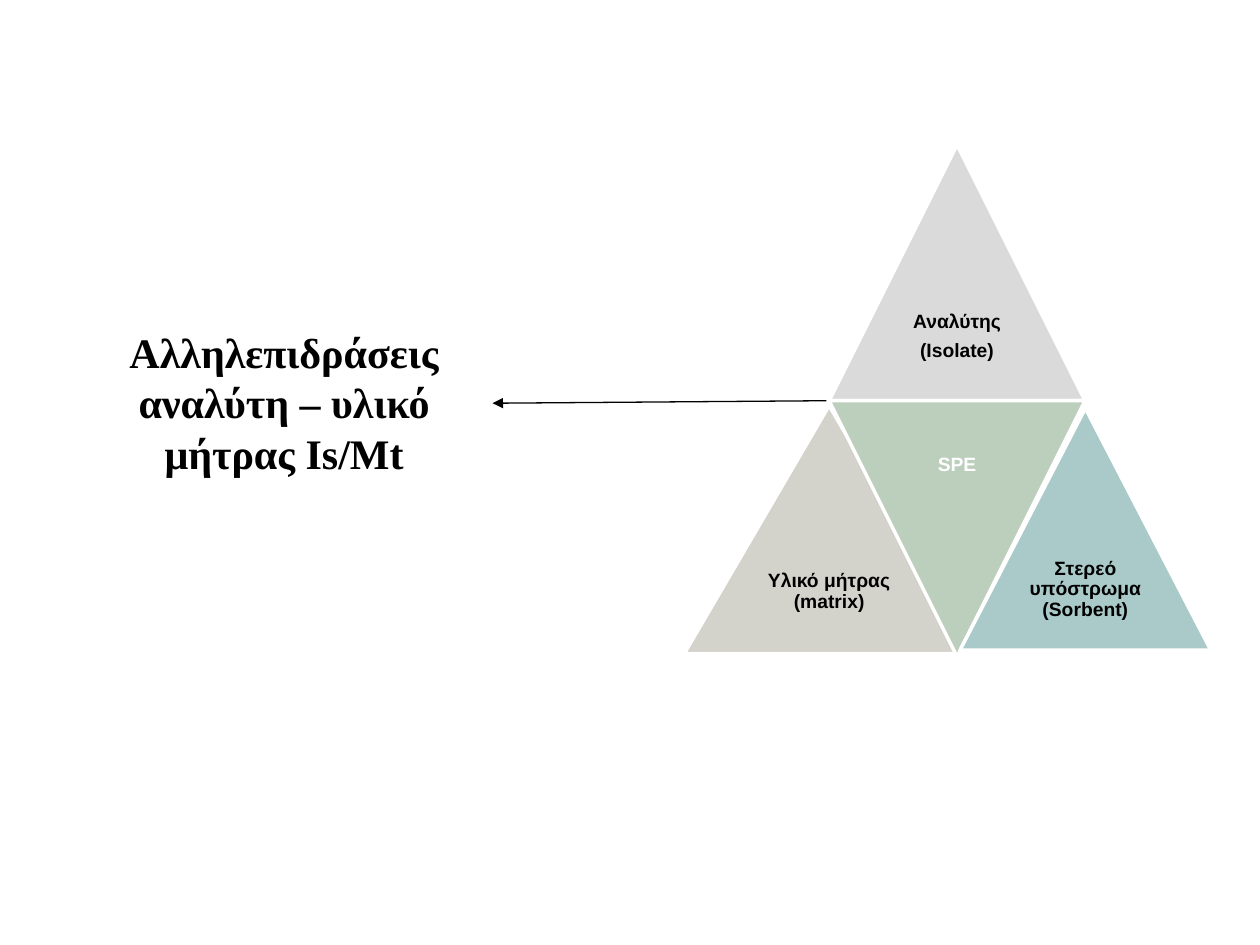
import pptx
import pptx.dml.color
import pptx.enum.shapes
import pptx.enum.text
import pptx.oxml
import pptx.oxml.ns
import pptx.util

Pt = pptx.util.Pt
RGBColor = pptx.dml.color.RGBColor
MIDDLE = pptx.enum.text.MSO_ANCHOR.MIDDLE
TOP = pptx.enum.text.MSO_ANCHOR.TOP

BLACK = RGBColor(0x00, 0x00, 0x00)
WHITE = RGBColor(0xFF, 0xFF, 0xFF)
GREY = RGBColor(0xDA, 0xDA, 0xDA)
SAND = RGBColor(0xD3, 0xD2, 0xCB)
GREEN = RGBColor(0xBC, 0xCE, 0xBC)
TEAL = RGBColor(0xAA, 0xCA, 0xCA)

LABEL_FONT = {"name": "Arial", "size": Pt(11), "bold": True}
HEADING_FONT = {"name": "Times New Roman", "size": Pt(24), "bold": True}
LABEL_PARAGRAPH = {"line_spacing": 0.9, "space_after": Pt(4.4)}
LABEL_MARGINS = {f"margin_{side}": Pt(3.6)
                 for side in ("left", "top", "right", "bottom")}


def add_centred_text(shapes, box, lines, color, font_format,
                     paragraph_format, frame_format):
    frame = shapes.add_textbox(*map(Pt, box)).text_frame
    frame.word_wrap = True
    for name, value in frame_format.items():
        setattr(frame, name, value)
    frame.text = "\n".join(lines)
    for paragraph in frame.paragraphs:
        paragraph.alignment = pptx.enum.text.PP_ALIGN.CENTER
        for name, value in paragraph_format.items():
            setattr(paragraph, name, value)
        font = paragraph.runs[0].font
        font.color.rgb = color
        for name, value in font_format.items():
            setattr(font, name, value)


presentation = pptx.Presentation()
presentation.slide_width = Pt(720)
presentation.slide_height = Pt(540)
slide = presentation.slides.add_slide(presentation.slide_layouts[6])

# Left, top, width, height, rotation, fill, label lines, label colour
triangles = [
    (473.8, 82.8, 146.2, 146.2, 0, GREY, ["Αναλύτης", "(Isolate)"], BLACK),
    (391, 231.8, 165.6, 141.8, 0, SAND, ["Υλικό μήτρας (matrix)"], BLACK),
    (473.8, 229, 146.2, 146.2, 180, GREEN, ["SPE"], WHITE),
    (548.6, 233.3, 143.3, 138.2, 0, TEAL,
     ["Στερεό υπόστρωμα (Sorbent)"], BLACK),
]
pyramid = slide.shapes.add_group_shape()
for left, top, width, height, rotation, fill, lines, color in triangles:
    triangle = pyramid.shapes.add_shape(
        pptx.enum.shapes.MSO_SHAPE.ISOSCELES_TRIANGLE,
        Pt(left), Pt(top), Pt(width), Pt(height))
    triangle.rotation = rotation
    triangle.shadow.inherit = False
    triangle.fill.solid()
    triangle.fill.fore_color.rgb = fill
    triangle.line.color.rgb = WHITE
    triangle.line.width = Pt(2)

    # The label fills the wide half of its triangle
    label_top = top if rotation else top + height / 2
    add_centred_text(
        pyramid.shapes, (left + width / 4, label_top, width / 2, height / 2),
        lines, color, LABEL_FONT, LABEL_PARAGRAPH,
        {"vertical_anchor": MIDDLE, **LABEL_MARGINS})

arrow = slide.shapes.add_connector(
    pptx.enum.shapes.MSO_CONNECTOR.STRAIGHT,
    Pt(472.3), Pt(229), Pt(281.5), Pt(230.4))
arrow.line.color.rgb = BLACK
arrow.line.width = Pt(0.75)
arrow_head = pptx.oxml.parse_xml(
    f'<a:tailEnd {pptx.oxml.ns.nsdecls("a")} type="triangle"/>')
arrow.line._get_or_add_ln().append(arrow_head)
arrow.element.spPr.append(
    pptx.oxml.parse_xml(f'<a:effectLst {pptx.oxml.ns.nsdecls("a")}/>'))

add_centred_text(
    slide.shapes, (36.7, 182.9, 251.3, 94.3),
    ["Αλληλεπιδράσεις αναλύτη – υλικό μήτρας Is/Mt"], BLACK,
    HEADING_FONT, {}, {"vertical_anchor": TOP})

presentation.save("out.pptx")
